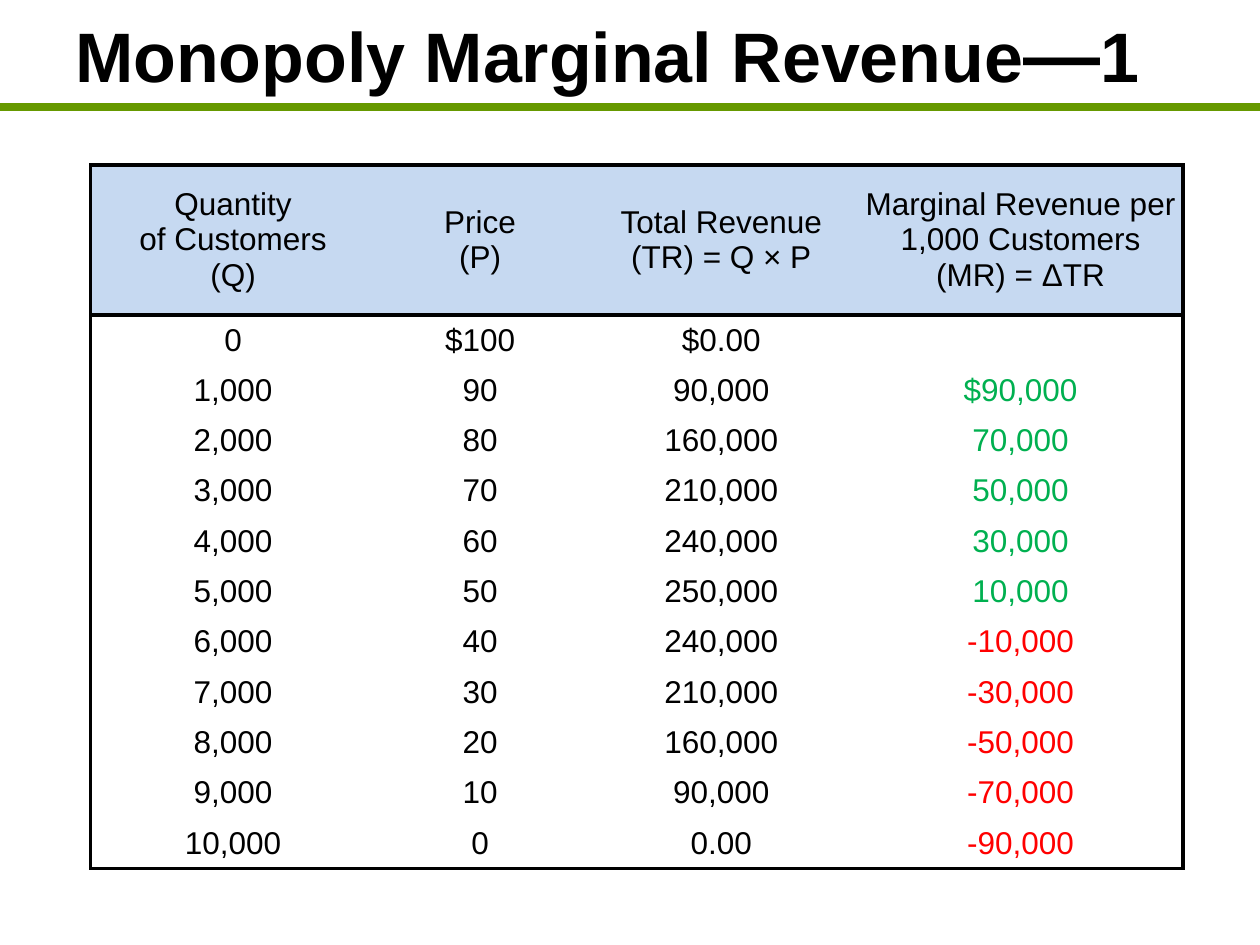
from dataclasses import dataclass

from lxml.etree import SubElement
from pptx import Presentation
from pptx.dml.color import RGBColor
from pptx.enum.shapes import MSO_CONNECTOR as Connector
from pptx.enum.text import MSO_ANCHOR as Anchor, PP_ALIGN as Align
from pptx.oxml.ns import qn
from pptx.util import Pt

BLACK = RGBColor(0x00, 0x00, 0x00)
OLIVE = RGBColor(0x66, 0x99, 0x00)
PALE_BLUE = RGBColor(0xC6, 0xD9, 0xF1)
GAIN_GREEN = RGBColor(0x00, 0xB0, 0x50)
LOSS_RED = RGBColor(0xFF, 0x00, 0x00)

FONT = "Arial"
BORDER_WIDTH = 2.25
COLUMN_WIDTHS = (162.72, 119.52, 156.24, 185.76)
HEADER_HEIGHT = 85.68
ROW_HEIGHT = 28.77

HEADERS = (
    ("Quantity", "of Customers", "(Q)"),
    ("Price", "(P)"),
    ("Total Revenue", "(TR) = Q × P"),
    ("Marginal Revenue per 1,000 Customers", "(MR) = ΔTR"),
)


@dataclass(frozen=True)
class RevenueRow:
    quantity: str
    price: str
    total: str
    marginal: str

    @property
    def marginal_color(self) -> RGBColor:
        return LOSS_RED if self.marginal.startswith("-") else GAIN_GREEN


REVENUES = (
    RevenueRow("0", "$100", "$0.00", ""),
    RevenueRow("1,000", "90", "90,000", "$90,000"),
    RevenueRow("2,000", "80", "160,000", "70,000"),
    RevenueRow("3,000", "70", "210,000", "50,000"),
    RevenueRow("4,000", "60", "240,000", "30,000"),
    RevenueRow("5,000", "50", "250,000", "10,000"),
    RevenueRow("6,000", "40", "240,000", "-10,000"),
    RevenueRow("7,000", "30", "210,000", "-30,000"),
    RevenueRow("8,000", "20", "160,000", "-50,000"),
    RevenueRow("9,000", "10", "90,000", "-70,000"),
    RevenueRow("10,000", "0", "0.00", "-90,000"),
)


def add_span(para, text: str, size: float, color: RGBColor = BLACK,
             bold: bool = False) -> None:
    span = para.add_run()
    span.text = text
    span.font.name = FONT
    span.font.size = Pt(size)
    span.font.bold = bold
    span.font.color.rgb = color


def add_rule(page) -> None:
    rule = page.shapes.add_connector(
        Connector.STRAIGHT, Pt(0), Pt(61.2), Pt(720), Pt(61.2))
    rule.line.color.rgb = OLIVE
    rule.line.width = Pt(4.5)
    SubElement(rule._element.spPr, qn("a:effectLst"))


def add_title(page) -> None:
    box = page.shapes.add_textbox(Pt(36), Pt(0), Pt(648), Pt(59))
    frame = box.text_frame
    frame.word_wrap = True
    frame.vertical_anchor = Anchor.MIDDLE
    para = frame.paragraphs[0]
    for text, size in (("Monopoly Marginal Revenue", 40), ("—", 44), ("1", 40)):
        add_span(para, text, size, bold=True)


def set_borders(cell, sides: str) -> None:
    """Draw the named sides of a cell and clear the others."""
    properties = cell._tc.get_or_add_tcPr()
    for side in "LRTB":
        line = SubElement(properties, qn(f"a:ln{side}"), w=str(Pt(BORDER_WIDTH)))
        if side in sides:
            fill = SubElement(line, qn("a:solidFill"))
            SubElement(fill, qn("a:srgbClr"), val=str(BLACK))
        else:
            SubElement(line, qn("a:noFill"))


def fill_cell(cell, lines: tuple[str, ...], color: RGBColor) -> None:
    cell.vertical_anchor = Anchor.MIDDLE
    cell.margin_left = cell.margin_right = Pt(4)
    cell.margin_top = cell.margin_bottom = Pt(0)
    frame = cell.text_frame
    for index, text in enumerate(lines):
        para = frame.add_paragraph() if index else frame.paragraphs[0]
        para.alignment = Align.CENTER
        if text:
            add_span(para, text, 18, color)


def add_revenue_table(page) -> None:
    row_count, column_count = len(REVENUES) + 1, len(HEADERS)
    height = HEADER_HEIGHT + ROW_HEIGHT * len(REVENUES)
    table = page.shapes.add_table(
        row_count, column_count, Pt(51.84), Pt(94.32),
        Pt(sum(COLUMN_WIDTHS)), Pt(height)).table
    table.first_row = table.horz_banding = False
    for column, width in zip(table.columns, COLUMN_WIDTHS):
        column.width = Pt(width)
    for index, row in enumerate(table.rows):
        row.height = Pt(ROW_HEIGHT if index else HEADER_HEIGHT)

    # Outer frame, plus the line under the header
    for r in range(row_count):
        for c in range(column_count):
            sides = "L" if c == 0 else "R" if c == column_count - 1 else ""
            sides += "T" if r <= 1 else ""
            sides += "B" if r in (0, row_count - 1) else ""
            cell = table.cell(r, c)
            set_borders(cell, sides)
            if r == 0:
                cell.fill.solid()
                cell.fill.fore_color.rgb = PALE_BLUE
            else:
                cell.fill.background()

    # Header and body text
    for c, lines in enumerate(HEADERS):
        fill_cell(table.cell(0, c), lines, BLACK)
    for r, revenue in enumerate(REVENUES, start=1):
        for c, text in enumerate((revenue.quantity, revenue.price, revenue.total)):
            fill_cell(table.cell(r, c), (text,), BLACK)
        fill_cell(table.cell(r, column_count - 1), (revenue.marginal,),
                  revenue.marginal_color)


def main() -> None:
    deck = Presentation()
    deck.slide_width, deck.slide_height = Pt(720), Pt(540)
    page = deck.slides.add_slide(deck.slide_layouts[6])
    add_rule(page)
    add_title(page)
    add_revenue_table(page)
    deck.save("out.pptx")


if __name__ == "__main__":
    main()
